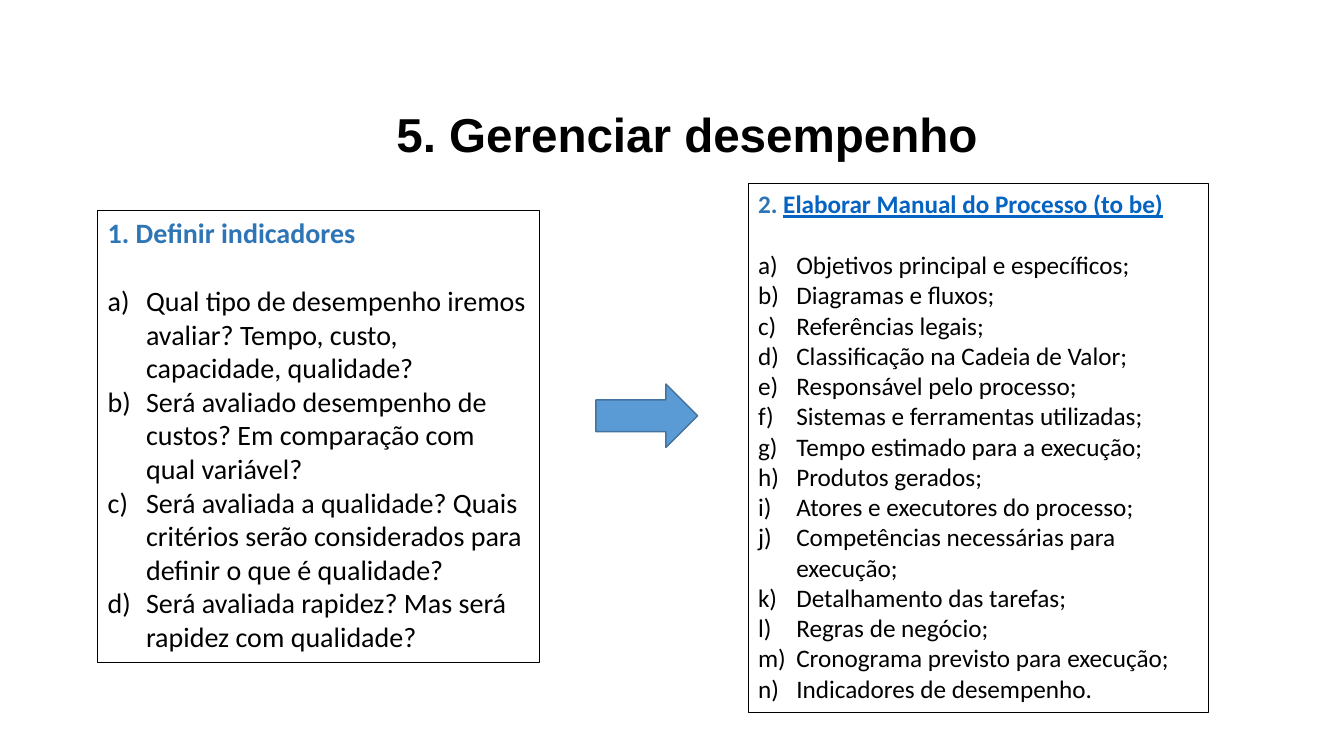
from lxml.etree import SubElement
from pptx import Presentation
from pptx.dml.color import RGBColor
from pptx.enum.shapes import MSO_SHAPE as Shape
from pptx.enum.text import MSO_ANCHOR as Anchor, MSO_AUTO_SIZE as AutoSize, PP_ALIGN as Align
from pptx.oxml.ns import qn
from pptx.util import Inches, Pt

BLACK = RGBColor(0x00, 0x00, 0x00)
WHITE = RGBColor(0xFF, 0xFF, 0xFF)
HEADING_BLUE = RGBColor(0x2E, 0x75, 0xB6)
LINK_BLUE = RGBColor(0x05, 0x63, 0xC1)
ARROW_FILL = RGBColor(0x5B, 0x9B, 0xD5)
ARROW_EDGE = RGBColor(0x43, 0x73, 0x9E)

INDICATOR_QUESTIONS = [
    "Qual tipo de desempenho iremos avaliar? Tempo, custo, capacidade, qualidade?",
    "Será avaliado desempenho de custos? Em comparação com qual variável?",
    "Será avaliada a qualidade? Quais critérios serão considerados para definir o que é qualidade?",
    "Será avaliada rapidez? Mas será rapidez com qualidade?",
]
MANUAL_SECTIONS = [
    "Objetivos principal e específicos;",
    "Diagramas e fluxos;",
    "Referências legais;",
    "Classificação na Cadeia de Valor;",
    "Responsável pelo processo;",
    "Sistemas e ferramentas utilizadas;",
    "Tempo estimado para a execução;",
    "Produtos gerados;",
    "Atores e executores do processo;",
    "Competências necessárias para execução;",
    "Detalhamento das tarefas;",
    "Regras de negócio;",
    "Cronograma previsto para execução;",
    "Indicadores de desempenho.",
]


class ProcessSlide:
    """Holds the slide and its style, and draws each kind of element."""

    title_font = "Arial"
    body_font = "Calibri"
    indent = Inches(0.38)
    line_height = 1.22

    def __init__(self, deck):
        self.slide = deck.slides.add_slide(deck.slide_layouts[6])

    def block(self, kind, place, fill, edge, width=0.75):
        block = self.slide.shapes.add_shape(kind, *map(Inches, place))
        block.shadow.inherit = False
        if fill is None:
            block.fill.background()
        else:
            block.fill.solid()
            block.fill.fore_color.rgb = fill
        block.line.color.rgb = edge
        block.line.width = Pt(width)
        return block

    def run(self, paragraph, text, size, color, font, bold=False, underline=False):
        run = paragraph.add_run()
        run.text = text
        run.font.name = font
        run.font.size = Pt(size)
        run.font.bold = bold
        run.font.underline = underline
        run.font.color.rgb = color

    def title(self, text, place):
        frame = self.block(Shape.RECTANGLE, place, WHITE, WHITE).text_frame
        frame.word_wrap = True
        frame.vertical_anchor = Anchor.MIDDLE
        heading = frame.paragraphs[0]
        heading.alignment = Align.CENTER
        heading.line_spacing = 0.9
        self.run(heading, text, 34, BLACK, self.title_font, bold=True)

    def lettered_list(self, place, size, heading_parts, items):
        frame = self.block(Shape.RECTANGLE, place, None, BLACK).text_frame
        frame.word_wrap = True
        frame.auto_size = AutoSize.SHAPE_TO_FIT_TEXT
        frame.vertical_anchor = Anchor.TOP
        heading = frame.paragraphs[0]
        heading.alignment = Align.LEFT
        heading.space_after = Pt(round(size * self.line_height, 1))
        for text, color, underline in heading_parts:
            self.run(heading, text, size, color, self.body_font, True, underline)
        for item in items:
            entry = frame.add_paragraph()
            entry.alignment = Align.LEFT
            self.letter(entry)
            self.run(entry, item, size, BLACK, self.body_font)

    def letter(self, paragraph):
        properties = paragraph._p.get_or_add_pPr()
        properties.set("marL", str(self.indent))
        properties.set("indent", str(-self.indent))
        SubElement(properties, qn("a:buFont"), typeface="+mj-lt")
        SubElement(properties, qn("a:buAutoNum"), type="alphaLcParenR")

    def arrow(self, place):
        self.block(Shape.RIGHT_ARROW, place, ARROW_FILL, ARROW_EDGE, 1)


def main():
    deck = Presentation()
    deck.slide_width = Inches(13.33)
    deck.slide_height = Inches(7.5)
    page = ProcessSlide(deck)
    page.title("5. Gerenciar desempenho", (0.3, 1.05, 13.03, 0.63))
    page.lettered_list(
        (0.97, 2.09, 4.38, 4.48), 20,
        [("1. Definir indicadores", HEADING_BLUE, False)],
        INDICATOR_QUESTIONS,
    )
    page.lettered_list(
        (7.42, 1.82, 4.57, 5.25), 18,
        [("2. ", HEADING_BLUE, False),
         ("Elaborar Manual do Processo (to be)", LINK_BLUE, True)],
        MANUAL_SECTIONS,
    )
    page.arrow((5.91, 3.81, 1.01, 0.63))
    deck.save("out.pptx")


if __name__ == "__main__":
    main()
